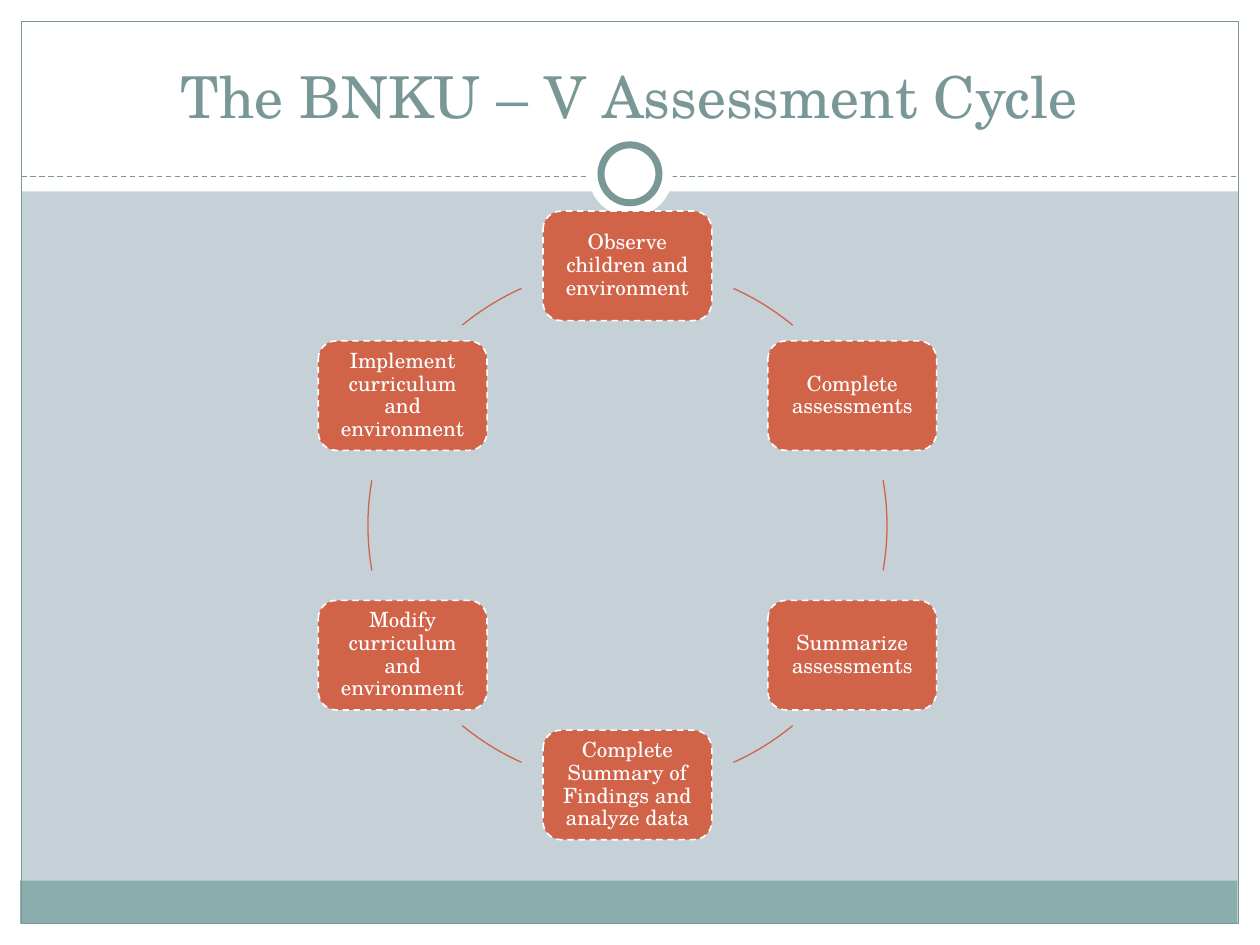
"""Build the assessment cycle slide: a framed title above a ring of six steps."""
from dataclasses import dataclass
from math import cos, radians, sin
from typing import Optional

from lxml.etree import SubElement
from pptx import Presentation
from pptx.dml.color import RGBColor
from pptx.enum.dml import MSO_LINE as Dash
from pptx.enum.shapes import MSO_CONNECTOR as Conn, MSO_SHAPE as Geom
from pptx.enum.text import MSO_ANCHOR as Anchor, MSO_AUTO_SIZE as Fit, PP_ALIGN as Align
from pptx.oxml.ns import qn
from pptx.util import Inches, Pt

W, H = Inches(10), Inches(7.5)
COL, ROW = W / 100, H / 75
FONT = "TeX Gyre Schola"
WHITE = RGBColor(0xFF, 0xFF, 0xFF)
MIST = RGBColor(0xC5, 0xD1, 0xD7)
TEAL = RGBColor(0x7A, 0x97, 0x98)
BAND = RGBColor(0x8C, 0xAD, 0xAE)
RUST = RGBColor(0xD1, 0x63, 0x49)

CENTER_X, CENTER_Y, RADIUS = 49.8, 41.7, 20.6
NODE_W, NODE_H = 13.4, 8.7


@dataclass(frozen=True)
class Box:
    """A rectangle in grid columns and rows."""
    x: float
    y: float
    w: float
    h: float

    def emu(self) -> tuple:
        return round(self.x * COL), round(self.y * ROW), round(self.w * COL), round(self.h * ROW)


@dataclass(frozen=True)
class Panel:
    """A piece of the slide's frame."""
    geom: Geom
    box: Box
    fill: Optional[RGBColor] = None
    line: Optional[RGBColor] = None
    width: float = 0.75


@dataclass(frozen=True)
class Step:
    """A step of the cycle and the angles of the arc that follows it."""
    text: str
    arc_from: float
    arc_to: float


BACKDROP = [
    Panel(Geom.RECTANGLE, Box(0, 73.3, 100, 1.7), WHITE),
    Panel(Geom.RECTANGLE, Box(0, 0, 100, 15.2), WHITE),
    Panel(Geom.RECTANGLE, Box(0, 0, 1.7, 75), WHITE),
    Panel(Geom.RECTANGLE, Box(98.3, 0, 1.7, 75), WHITE),
    Panel(Geom.RECTANGLE, Box(1.6, 69.9, 96.6, 3.4), BAND),
    Panel(Geom.RECTANGLE, Box(1.7, 1.7, 96.6, 71.6), line=TEAL),
]
MEDALLION = [
    Panel(Geom.OVAL, Box(46.7, 10.5, 6.7, 6.7), WHITE),
    Panel(Geom.OVAL, Box(47.7, 11.5, 4.6, 4.6), WHITE, TEAL, 4),
]
STEPS = [
    Step("Observe children and environment", 294.1, 309.5),
    Step("Complete assessments", 350, 10),
    Step("Summarize assessments", 50.5, 65.9),
    Step("Complete Summary of Findings and analyze data", 114.1, 129.5),
    Step("Modify curriculum and environment", 170, 190),
    Step("Implement curriculum and environment", 230.5, 245.9),
]


def put_text(sp, text: str, *, size: float, color: RGBColor, anchor: Anchor,
             inset_x: float = 0.05, spacing: float = 1.0) -> None:
    """Write one centred paragraph into a shape."""
    tf = sp.text_frame
    tf.word_wrap, tf.auto_size, tf.vertical_anchor = True, Fit.NONE, anchor
    tf.margin_left = tf.margin_right = Inches(inset_x)
    tf.margin_top = tf.margin_bottom = Inches(0.05)
    p = tf.paragraphs[0]
    p.alignment, p.line_spacing = Align.CENTER, spacing
    r = p.add_run()
    r.text = text
    r.font.name, r.font.size, r.font.color.rgb = FONT, Pt(size), color


def add_panel(s, panel: Panel):
    """Draw a preset shape with its fill and line."""
    sp = s.shapes.add_shape(panel.geom, *panel.box.emu())
    sp.shadow.inherit = False
    if panel.fill is None:
        sp.fill.background()
    else:
        sp.fill.solid()
        sp.fill.fore_color.rgb = panel.fill
    if panel.line is None:
        sp.line.fill.background()
    else:
        sp.line.color.rgb, sp.line.width = panel.line, Pt(panel.width)
    return sp


def add_divider(s, x1: float, x2: float, y: float) -> None:
    """Draw the dashed rule below the title."""
    line = s.shapes.add_connector(Conn.STRAIGHT, round(x1 * COL), round(y * ROW),
                                  round(x2 * COL), round(y * ROW))
    line.line.color.rgb, line.line.width = TEAL, Pt(0.75)
    line.line.dash_style = Dash.DASH
    SubElement(line.element.spPr, qn("a:effectLst"))


def add_title(s, text: str, box: Box) -> None:
    """Place the title in front of the frame."""
    title = s.shapes.title
    title.left, title.top, title.width, title.height = box.emu()
    put_text(title, text, size=33, color=TEAL, anchor=Anchor.BOTTOM, inset_x=0.1)
    s.shapes.element.append(title.element)


def add_step(s, step: Step, angle: float) -> None:
    """Draw a step on the ring and the arc leading on from it."""
    x = CENTER_X + RADIUS * cos(radians(angle)) - NODE_W / 2
    y = CENTER_Y + RADIUS * sin(radians(angle)) - NODE_H / 2
    node = add_panel(s, Panel(Geom.ROUNDED_RECTANGLE, Box(x, y, NODE_W, NODE_H), RUST, WHITE, 0.9))
    node.line.dash_style = Dash.DASH
    node.adjustments[0] = 1 / 6
    put_text(node, step.text, size=12, color=WHITE, anchor=Anchor.MIDDLE, spacing=0.9)
    ring = Box(CENTER_X - RADIUS, CENTER_Y - RADIUS, 2 * RADIUS, 2 * RADIUS)
    arc = add_panel(s, Panel(Geom.ARC, ring, line=RUST))
    for i, degrees in enumerate((step.arc_from, step.arc_to)):
        arc.adjustments[i] = degrees * 0.6


def main() -> None:
    """Build and save the slide."""
    prs = Presentation()
    prs.slide_width, prs.slide_height = W, H
    s = prs.slides.add_slide(prs.slide_layouts[5])
    s.background.fill.solid()
    s.background.fill.fore_color.rgb = MIST
    for panel in BACKDROP:
        add_panel(s, panel)
    add_divider(s, 1.7, 98.3, 14)
    for panel in MEDALLION:
        add_panel(s, panel)
    add_title(s, "The BNKU – V Assessment Cycle", Box(3.3, 2.5, 93.3, 8.3))
    for i, step in enumerate(STEPS):
        add_step(s, step, i * 360 / len(STEPS) - 90)
    prs.save("out.pptx")


if __name__ == "__main__":
    main()
